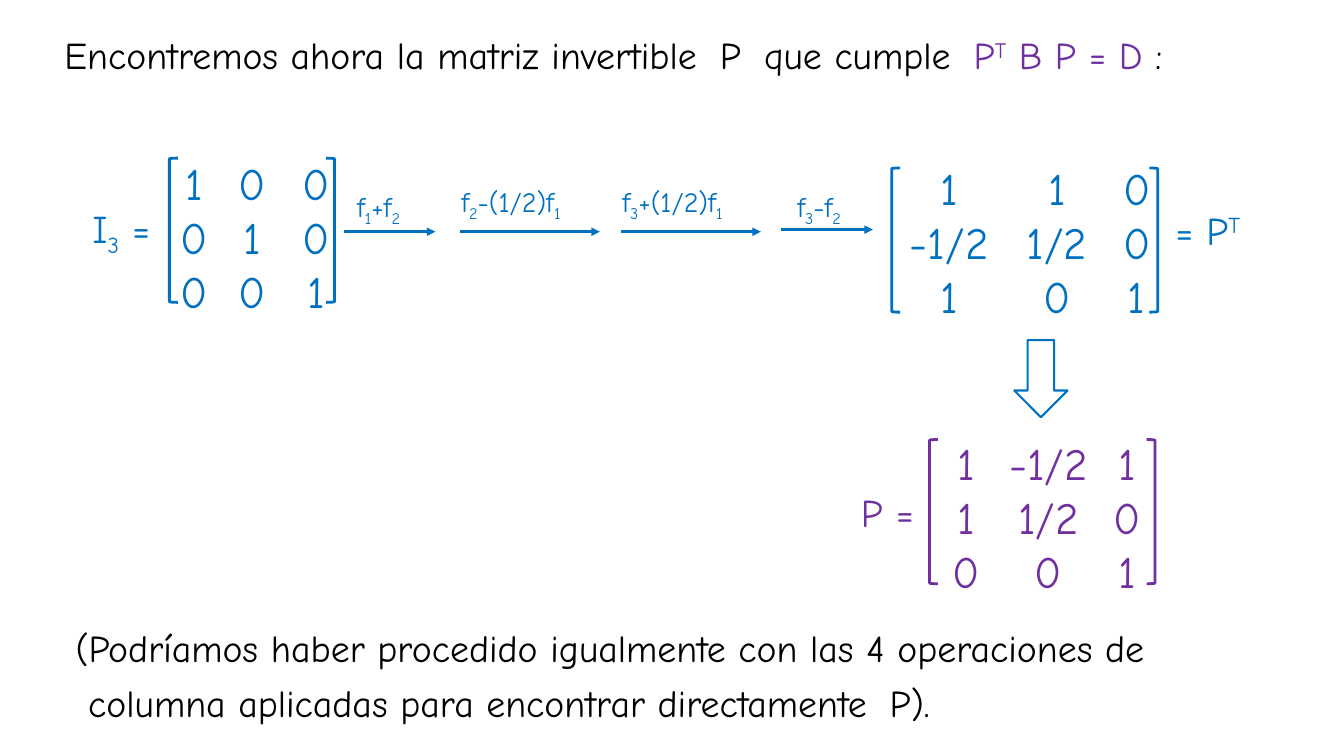
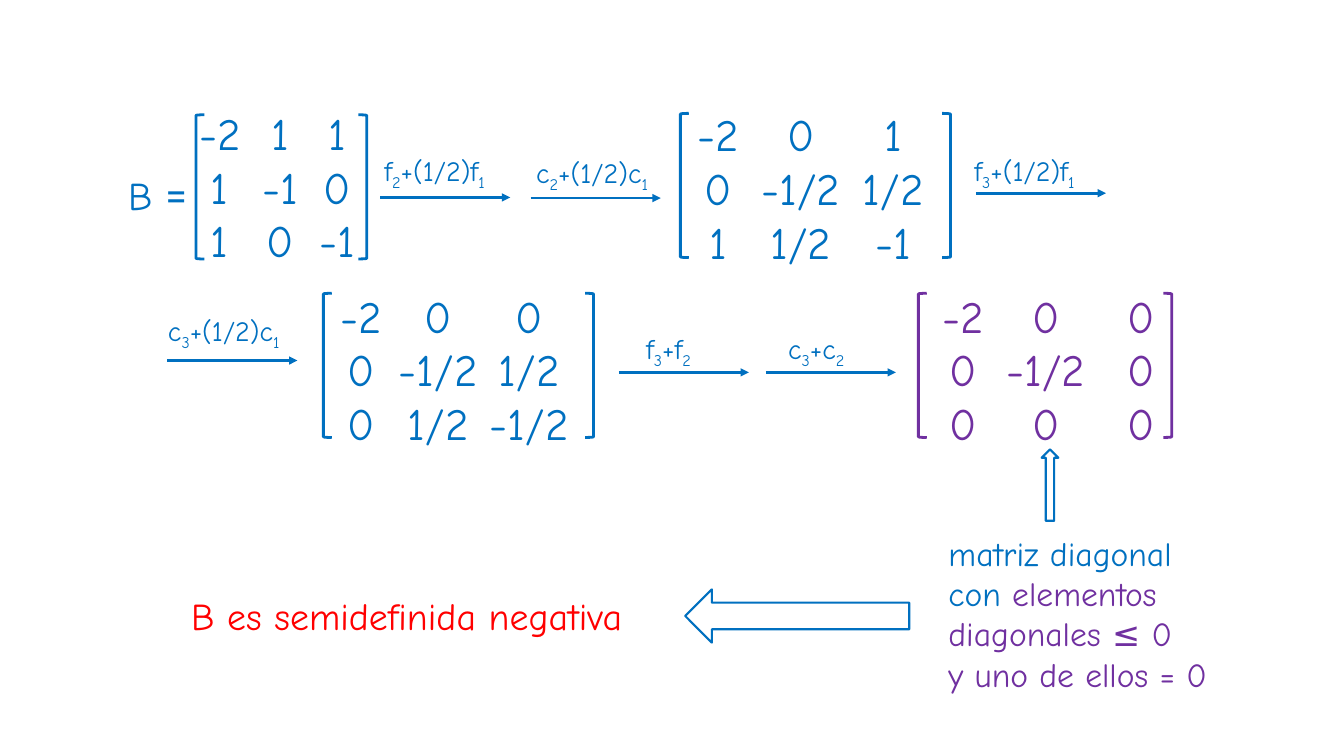
from lxml import etree
from pptx import Presentation
from pptx.dml.color import RGBColor
from pptx.enum.shapes import MSO_CONNECTOR, MSO_SHAPE
from pptx.enum.text import MSO_ANCHOR, MSO_AUTO_SIZE, PP_ALIGN
from pptx.oxml.ns import qn
from pptx.util import Pt

STRAIGHT = MSO_CONNECTOR.STRAIGHT
LEFT_BRACKET, RIGHT_BRACKET = MSO_SHAPE.LEFT_BRACKET, MSO_SHAPE.RIGHT_BRACKET
DOWN, LEFT, UP = MSO_SHAPE.DOWN_ARROW, MSO_SHAPE.LEFT_ARROW, MSO_SHAPE.UP_ARROW
TOP, ALIGN_LEFT, NO_FIT = MSO_ANCHOR.TOP, PP_ALIGN.LEFT, MSO_AUTO_SIZE.NONE

COLORS = {"black": "000000", "blue": "0070C0", "purple": "7030A0", "red": "FF0000"}
FONT = "Comic Neue"
BASELINES = {"_": "-25000", "^": "30000"}
FRAME = {"margin_left": 0, "margin_top": 0, "margin_right": 0, "margin_bottom": 0,
         "auto_size": NO_FIT, "vertical_anchor": TOP}
LOOSE = {"line_spacing": 0.9, "space_before": Pt(10)}
WIDE = {"spc": "750"}
BRACKET_W, BRACKET_H = 6, 103


def rgb(color):
    return RGBColor.from_string(COLORS[color])


def set_attrs(obj, values):
    for name, value in values.items():
        setattr(obj, name, value)


def split_scripts(text):
    parts, baseline = [["", None]], None
    for ch in text:
        if ch in BASELINES:
            baseline = BASELINES[ch]
        elif baseline:
            parts += [[ch, baseline], ["", None]]
            baseline = None
        else:
            parts[-1][0] += ch
    return [part for part in parts if part[0]]


def add_runs(p, runs, size, color):
    for text, fmt in runs:
        for part, baseline in split_scripts(text):
            r = p.add_run()
            r.text = part
            set_attrs(r.font, {"name": fmt.get("name", FONT), "size": Pt(size),
                               "bold": False})
            r.font.color.rgb = rgb(fmt.get("color", color))
            rPr = r._r.get_or_add_rPr()
            for attr, value in (("baseline", baseline), ("spc", fmt.get("spc"))):
                if value:
                    rPr.set(attr, value)


def fill_frame(shape, paragraphs, size, color, wrap=False, spacing=None):
    tf = shape.text_frame
    set_attrs(tf, FRAME)
    tf.word_wrap = wrap
    for i, runs in enumerate(paragraphs):
        p = tf.paragraphs[0] if i == 0 else tf.add_paragraph()
        p.alignment = ALIGN_LEFT
        set_attrs(p, spacing or {})
        add_runs(p, runs, size, color)
    return tf


def add_label(s, x, y, w, h, paragraphs, size, color):
    box = s.shapes.add_textbox(Pt(x), Pt(y), Pt(w), Pt(h))
    return fill_frame(box, paragraphs, size, color)


def fill_placeholder(ph, x, y, w, h, paragraphs, color, spacing=None):
    set_attrs(ph, {"left": Pt(x), "top": Pt(y), "width": Pt(w), "height": Pt(h)})
    return fill_frame(ph, paragraphs, 27, color, True, spacing)


def add_outline(s, kind, x, y, w, h, color, weight):
    shape = s.shapes.add_shape(kind, Pt(x), Pt(y), Pt(w), Pt(h))
    shape.shadow.inherit = False
    shape.fill.background()
    shape.line.color.rgb = rgb(color)
    shape.line.width = Pt(weight)


def add_matrix(s, x, y, w, lift, centers, rows, color="blue"):
    add_outline(s, LEFT_BRACKET, x, y, BRACKET_W, BRACKET_H, color, 2)
    add_outline(s, RIGHT_BRACKET, x + w - BRACKET_W, y, BRACKET_W, BRACKET_H, color, 2)
    lines = [[("".join("\t" + cell for cell in row.split()), {})] for row in rows]
    tf = add_label(s, x, y - lift, w + 10, 117, lines, 32, color)
    for p in tf.paragraphs:
        tabs = etree.SubElement(p._p.get_or_add_pPr(), qn("a:tabLst"))
        for center in centers:
            etree.SubElement(tabs, qn("a:tab"), pos=str(Pt(center)), algn="ctr")


def add_step(s, x, y, w, dx, rise, operation):
    line = s.shapes.add_connector(STRAIGHT, Pt(x), Pt(y), Pt(x + w), Pt(y))
    line.line.color.rgb = rgb("blue")
    line.line.width = Pt(2)
    spPr = line._element.spPr
    etree.SubElement(spPr.find(qn("a:ln")), qn("a:tailEnd"), type="triangle")
    etree.SubElement(spPr, qn("a:effectLst"))
    add_label(s, x + dx, y - rise, w, 25, [[(operation, {})]], 20, "blue")


def build_transition_slide(prs):
    s = prs.slides.add_slide(prs.slide_layouts[1])
    title, body = s.placeholders
    fill_placeholder(title, 46, 26.5, 886, 78, [[
        ("Encontremos ahora la matriz invertible", {}), (" ", WIDE), ("P", {}),
        (" ", WIDE), ("que cumple", {}), (" ", WIDE),
        ("P^T B P = D ", {"color": "purple"}), (":", {})]], "black", LOOSE)

    add_label(s, 66, 146, 50, 34, [[("I_3 =", {})]], 28, "blue")
    add_matrix(s, 121, 113, 118, 1.5, (18, 59, 105), ("1 0 0", "0 1 0", "0 0 1"))
    for step in ((245.5, 165.5, 65.5, 9.5, 30, "f_1+f_2"),
                 (328.5, 165.5, 100, 1, 33.5, "f_2-(1/2)f_1"),
                 (443.5, 165.5, 100, 1, 33.5, "f_3+(1/2)f_1"),
                 (558, 164, 65.5, 11.5, 28.5, "f_3-f_2")):
        add_step(s, *step)
    add_matrix(s, 637, 120, 190, 5, (41, 118, 175), ("1 1 0", "-1/2 1/2 0", "1 0 1"))
    add_label(s, 839.5, 147.5, 60, 34, [[("= P^T", {})]], 28, "blue")

    add_outline(s, DOWN, 724.5, 243, 38, 55, "blue", 1.5)
    add_label(s, 615, 348.5, 42, 34, [[("P =", {})]], 28, "purple")
    add_matrix(s, 664, 314, 161, 2.5, (26, 85, 141),
               ("1 -1/2 1", "1 1/2 0", "0 0 1"), "purple")

    tf = fill_placeholder(body, 46, 450, 886, 78, [
        [("(Podríamos haber procedido igualmente con las 4 operaciones de", {})],
        [("columna aplicadas para encontrar directamente", {}), (" ", WIDE),
         ("P).", {})]], "black", LOOSE)
    for p, margin in zip(tf.paragraphs, (8, 17)):
        pPr = p._p.get_or_add_pPr()
        pPr.set("marL", str(Pt(margin)))
        pPr.set("indent", "0")
        etree.SubElement(pPr, qn("a:buNone"))


def build_diagonal_slide(prs):
    s = prs.slides.add_slide(prs.slide_layouts[5])
    fill_placeholder(s.shapes.title, 136.5, 423, 340, 36,
                     [[("B es semidefinida negativa", {})]], "red",
                     {"line_spacing": 1.0})

    add_label(s, 91.5, 122.5, 45, 34, [[("B ", {}), ("=", {"name": "Roboto"})]],
              28, "blue")
    for matrix in ((140, 82, 122, 6.5, (17, 60, 101), ("-2 1 1", "1 -1 0", "1 0 -1")),
                   (486, 81, 193, 4.5, (27, 86, 152),
                    ("-2 0 1", "0 -1/2 1/2", "1 1/2 -1")),
                   (231, 209.5, 193, 3.5, (27, 82, 147),
                    ("-2 0 0", "0 -1/2 1/2", "0 1/2 -1/2")),
                   (656, 209.5, 181, 3.5, (32, 91, 159),
                    ("-2 0 0", "0 -1/2 0", "0 0 0"), "purple")):
        add_matrix(s, *matrix)
    for x, y, dx, rise, operation in ((271.5, 141, 3, 31.5, "f_2+(1/2)f_1"),
                                      (379, 141.5, 4, 30.5, "c_2+(1/2)c_1"),
                                      (697, 138, -1, 28.5, "f_3+(1/2)f_1"),
                                      (119.5, 257.5, 0.5, 33.5, "c_3+(1/2)c_1"),
                                      (442, 266, 19.5, 29, "f_3+f_2"),
                                      (547, 266, 16, 29, "c_3+c_2")):
        add_step(s, x, y, 93, dx, rise, operation)

    add_outline(s, UP, 744, 321, 12, 51, "blue", 1.5)
    add_label(s, 677.5, 380.5, 200, 118, [
        [("matriz diagonal", {"color": "blue"})],
        [("con ", {"color": "blue"}), ("elementos", {})],
        [("diagonales ≤ 0", {})],
        [("y uno de ellos = 0", {})]], 24, "purple")
    add_outline(s, LEFT, 489.5, 421, 160, 38, "blue", 1.5)


def main():
    prs = Presentation()
    prs.slide_width, prs.slide_height = Pt(960), Pt(540)
    build_transition_slide(prs)
    build_diagonal_slide(prs)
    prs.save("out.pptx")


if __name__ == "__main__":
    main()
